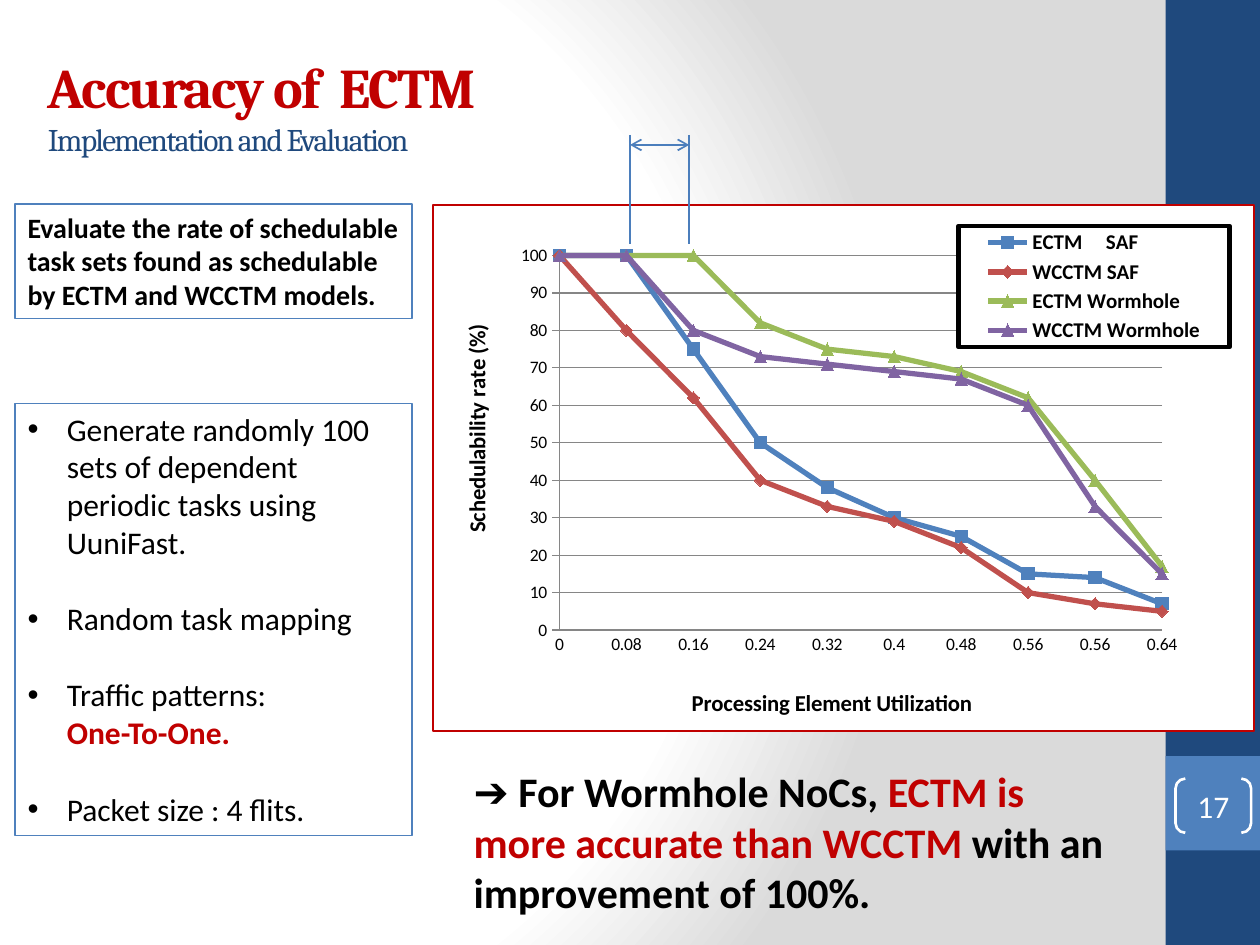
from dataclasses import dataclass

from lxml import etree
from pptx import Presentation
from pptx.chart.data import CategoryChartData
from pptx.dml.color import RGBColor
from pptx.enum.chart import XL_CHART_TYPE, XL_LEGEND_POSITION, XL_MARKER_STYLE, XL_TICK_MARK
from pptx.enum.shapes import MSO_CONNECTOR, MSO_SHAPE
from pptx.enum.text import MSO_ANCHOR, MSO_AUTO_SIZE, PP_ALIGN
from pptx.oxml import parse_xml
from pptx.oxml.ns import nsdecls, qn
from pptx.util import Inches, Pt

LINE_CHART = XL_CHART_TYPE.LINE_MARKERS
LEGEND_RIGHT = XL_LEGEND_POSITION.RIGHT
TICK_NONE, TICK_OUT = XL_TICK_MARK.NONE, XL_TICK_MARK.OUTSIDE
MARKERS = (XL_MARKER_STYLE.SQUARE, XL_MARKER_STYLE.DIAMOND,
           XL_MARKER_STYLE.TRIANGLE, XL_MARKER_STYLE.TRIANGLE)
STRAIGHT = MSO_CONNECTOR.STRAIGHT
RECTANGLE, BRACKETS = MSO_SHAPE.RECTANGLE, MSO_SHAPE.DOUBLE_BRACKET
TOP, MIDDLE = MSO_ANCHOR.TOP, MSO_ANCHOR.MIDDLE
LEFT, CENTER = PP_ALIGN.LEFT, PP_ALIGN.CENTER
NO_FIT = MSO_AUTO_SIZE.NONE


@dataclass(frozen=True)
class Theme:
    heading: str = "Cambria"
    body: str = "Calibri"
    navy: str = "1F497D"
    blue: str = "4F81BD"
    guide: str = "4B7EBC"
    red: str = "C00000"
    black: str = "000000"
    white: str = "FFFFFF"
    shade: str = "DADADA"
    grid: str = "868686"
    series: tuple = ("4F81BD", "C0504D", "9BBB59", "8064A2")
    title_size: int = 32
    closing_size: int = 24
    text_size: int = 18
    note_size: int = 16
    axis_title_size: int = 13
    legend_size: int = 12
    tick_size: int = 10


class SlideBuilder:
    def __init__(self, slide, theme):
        self.slide, self.theme = slide, theme

    def font(self, font, size, color, bold=False, name=None):
        font.size, font.bold, font.name = Pt(size), bold, name or self.theme.body
        font.color.rgb = RGBColor.from_string(color)

    def outline(self, line, color, width):
        line.color.rgb = RGBColor.from_string(color)
        line.width = Pt(width)

    def place(self, shape, box):
        shape.left, shape.top, shape.width, shape.height = map(Inches, box)

    def background(self):
        stops = ((0, self.theme.white), (75, self.theme.white), (100, self.theme.shade))
        stop_xml = "".join(f'<a:gs pos="{pos * 1000}"><a:srgbClr val="{color}"/></a:gs>'
                           for pos, color in stops)
        gradient = parse_xml(
            f'<a:gradFill {nsdecls("a")} rotWithShape="1"><a:gsLst>{stop_xml}</a:gsLst>'
            '<a:path path="circle"><a:fillToRect l="20000" t="50000" r="100000" b="50000"/>'
            '</a:path></a:gradFill>')
        self.slide.background.fill.solid()
        solid = self.slide.element.find(".//" + qn("p:bgPr")).find(qn("a:solidFill"))
        solid.getparent().replace(solid, gradient)

    def title(self, heading, subtitle, box):
        title = self.slide.shapes.title
        self.place(title, box)
        frame = title.text_frame
        frame.vertical_anchor, frame.auto_size = MIDDLE, NO_FIT
        paragraph = frame.paragraphs[0]
        paragraph.text = f"{heading}\v{subtitle}"
        paragraph.alignment = LEFT
        styles = ((self.theme.title_size, self.theme.red, True),
                  (self.theme.text_size, self.theme.navy, False))
        for run, style in zip(paragraph.runs, styles):
            self.font(run.font, *style, name=self.theme.heading)
            run.font._element.set("spc", "-100")

    def bullets(self, items, box):
        body = self.slide.placeholders[1]
        self.place(body, box)
        self.outline(body.line, self.theme.blue, 0.75)
        frame = body.text_frame
        frame.auto_size, frame.vertical_anchor = NO_FIT, TOP
        frame.text = "\n".join(items)
        for index, paragraph in enumerate(frame.paragraphs):
            paragraph.space_before = Pt(22 if index else 0)
            properties = paragraph._p.get_or_add_pPr()
            properties.set("marL", str(Inches(0.31)))
            properties.set("indent", str(Inches(-0.31)))
            for position, run in enumerate(paragraph.runs):
                accent = position > 0
                self.font(run.font, self.theme.text_size,
                          self.theme.red if accent else self.theme.black, accent)

    def shape(self, kind, box, fill=None, line=None, width=0.75):
        shape = self.slide.shapes.add_shape(kind, *map(Inches, box))
        shape.shadow.inherit = False
        if fill:
            shape.fill.solid()
            shape.fill.fore_color.rgb = RGBColor.from_string(fill)
        else:
            shape.fill.background()
        if line:
            self.outline(shape.line, line, width)
        else:
            shape.line.fill.background()
        return shape

    def text(self, shape, pieces, size, bold=False, align=LEFT, anchor=TOP):
        frame = shape.text_frame
        frame.word_wrap, frame.vertical_anchor = True, anchor
        paragraph = frame.paragraphs[0]
        paragraph.alignment = align
        for words, color in pieces:
            run = paragraph.add_run()
            run.text = words
            self.font(run.font, size, color, bold)

    def text_box(self, pieces, box, size):
        self.text(self.slide.shapes.add_textbox(*map(Inches, box)), pieces, size, bold=True)

    def guide(self, start, end, arrows=False):
        line = self.slide.shapes.add_connector(STRAIGHT, *map(Inches, start + end))
        self.outline(line.line, self.theme.guide, 1)
        if arrows:
            for end_tag in ("a:headEnd", "a:tailEnd"):
                etree.SubElement(line.line._ln, qn(end_tag)).set("type", "arrow")
        etree.SubElement(line._element.spPr, qn("a:effectLst"))

    def chart_layout(self, parent, index, inner=False, **fractions):
        layout = parent.find(qn("c:layout"))
        if layout is None:
            layout = parent.makeelement(qn("c:layout"))
            parent.insert(index, layout)
        manual = etree.SubElement(layout, qn("c:manualLayout"))
        settings = {"layoutTarget": "inner"} if inner else {}
        settings.update(xMode="edge", yMode="edge", **fractions)
        for tag, value in settings.items():
            etree.SubElement(manual, qn(f"c:{tag}")).set("val", str(value))

    def box_xml(self, color, width):
        return parse_xml(
            f'<c:spPr {nsdecls("c", "a")}><a:solidFill><a:srgbClr val="{self.theme.white}"/>'
            f'</a:solidFill><a:ln w="{Pt(width)}"><a:solidFill><a:srgbClr val="{color}"/>'
            '</a:solidFill></a:ln></c:spPr>')

    def axis(self, axis, title, tick, x, y):
        axis.major_tick_mark, axis.minor_tick_mark = tick, TICK_NONE
        self.outline(axis.format.line, self.theme.grid, 0.75)
        frame = axis.axis_title.text_frame
        frame.text = title
        self.font(frame.paragraphs[0].runs[0].font, self.theme.axis_title_size,
                  self.theme.black, True)
        self.chart_layout(axis.axis_title._element, 1, x=x, y=y)

    def line_chart(self, categories, series, box):
        data = CategoryChartData()
        data.categories = categories
        for name, values in series.items():
            data.add_series(name, values)
        chart = self.slide.shapes.add_chart(LINE_CHART, *map(Inches, box), data).chart
        self.font(chart.font, self.theme.tick_size, self.theme.black)
        chart.has_title = False
        space = chart.element
        space.find(qn("c:chart")).addnext(self.box_xml(self.theme.red, 1))
        self.chart_layout(space.find(".//" + qn("c:plotArea")), 0, inner=True,
                          x=0.154, y=0.096, w=0.734, h=0.712)
        # Axes
        self.axis(chart.category_axis, "Processing Element Utilization", TICK_NONE, 0.31, 0.91)
        rate = chart.value_axis
        self.axis(rate, "Schedulability rate (%)", TICK_OUT, 0.03, 0.22)
        rate.minimum_scale, rate.maximum_scale, rate.major_unit = 0, 100, 10
        rate.has_major_gridlines = True
        self.outline(rate.major_gridlines.format.line, self.theme.grid, 0.75)
        rate._element.find(qn("c:crosses")).addnext(
            parse_xml(f'<c:crossBetween {nsdecls("c")} val="midCat"/>'))
        # Series
        for line, color, marker in zip(chart.plots[0].series, self.theme.series, MARKERS):
            line.smooth = False
            self.outline(line.format.line, color, 3)
            line.marker.style, line.marker.size = marker, 7
            line.marker.format.fill.solid()
            line.marker.format.fill.fore_color.rgb = RGBColor.from_string(color)
            self.outline(line.marker.format.line, color, 0.75)
        # Legend
        chart.has_legend = True
        legend = chart.legend
        legend.position, legend.include_in_layout = LEGEND_RIGHT, False
        self.font(legend.font, self.theme.legend_size, self.theme.black, True)
        self.chart_layout(legend._element, 1, x=0.64, y=0.04, w=0.33, h=0.23)
        legend._element.find(qn("c:overlay")).addnext(self.box_xml(self.theme.black, 2.5))


def main():
    theme = Theme()
    deck = Presentation()
    deck.slide_width, deck.slide_height = Inches(10), Inches(7.5)
    page = SlideBuilder(deck.slides.add_slide(deck.slide_layouts[1]), theme)

    # Backdrop, side band and page number
    page.background()
    page.shape(RECTANGLE, (9.25, 0, 0.75, 7.5), fill=theme.navy)
    page.shape(RECTANGLE, (9.25, 6, 0.75, 0.75), fill=theme.blue)
    number = page.shape(BRACKETS, (9.33, 6.18, 0.6, 0.43), line=theme.white, width=1.5)
    number.adjustments[0] = 0.18
    frame = number.text_frame
    frame.margin_left = frame.margin_right = frame.margin_top = frame.margin_bottom = 0
    page.text(number, [("17", theme.white)], theme.text_size, align=CENTER, anchor=MIDDLE)

    page.title("Accuracy of  ECTM", "Implementation and Evaluation", (0.28, 0.21, 8.33, 1.25))

    # Schedulability chart
    page.line_chart(
        ("0", "0.08", "0.16", "0.24", "0.32", "0.4", "0.48", "0.56", "0.56", "0.64"),
        {"ECTM     SAF": (100, 100, 75, 50, 38, 30, 25, 15, 14, 7),
         "WCCTM SAF": (100, 80, 62, 40, 33, 29, 22, 10, 7, 5),
         "ECTM Wormhole": (100, 100, 100, 82, 75, 73, 69, 62, 40, 17),
         "WCCTM Wormhole": (100, 100, 80, 73, 71, 69, 67, 60, 33, 15)},
        (3.43, 1.62, 6.53, 4.19))

    # Goal and experiment setup
    goal = page.shape(RECTANGLE, (0.12, 1.62, 3.15, 0.91), line=theme.blue)
    page.text(goal, [("Evaluate the rate of schedulable task sets found as schedulable "
                      "by ECTM and WCCTM models.", theme.black)], theme.note_size, bold=True)
    page.bullets(("Generate randomly 100 sets of dependent periodic tasks using UuniFast.",
                  "Random task mapping", "Traffic patterns: \vOne-To-One.",
                  "Packet size : 4 flits."), (0.12, 3.2, 3.15, 3.43))

    # Conclusion
    page.text_box([("➔ For Wormhole NoCs, ", theme.black),
                   ("ECTM is more accurate than WCCTM ", theme.red),
                   ("with an improvement of 100%.", theme.black)],
                  (3.66, 6.03, 5.35, 1.31), theme.closing_size)

    # Improvement span above the chart
    span = (5, 5.47)
    for x in span:
        page.guide((x, 1.07), (x, 1.94))
    page.guide((span[0], 1.15), (span[1], 1.15), arrows=True)

    deck.save("out.pptx")


if __name__ == "__main__":
    main()
